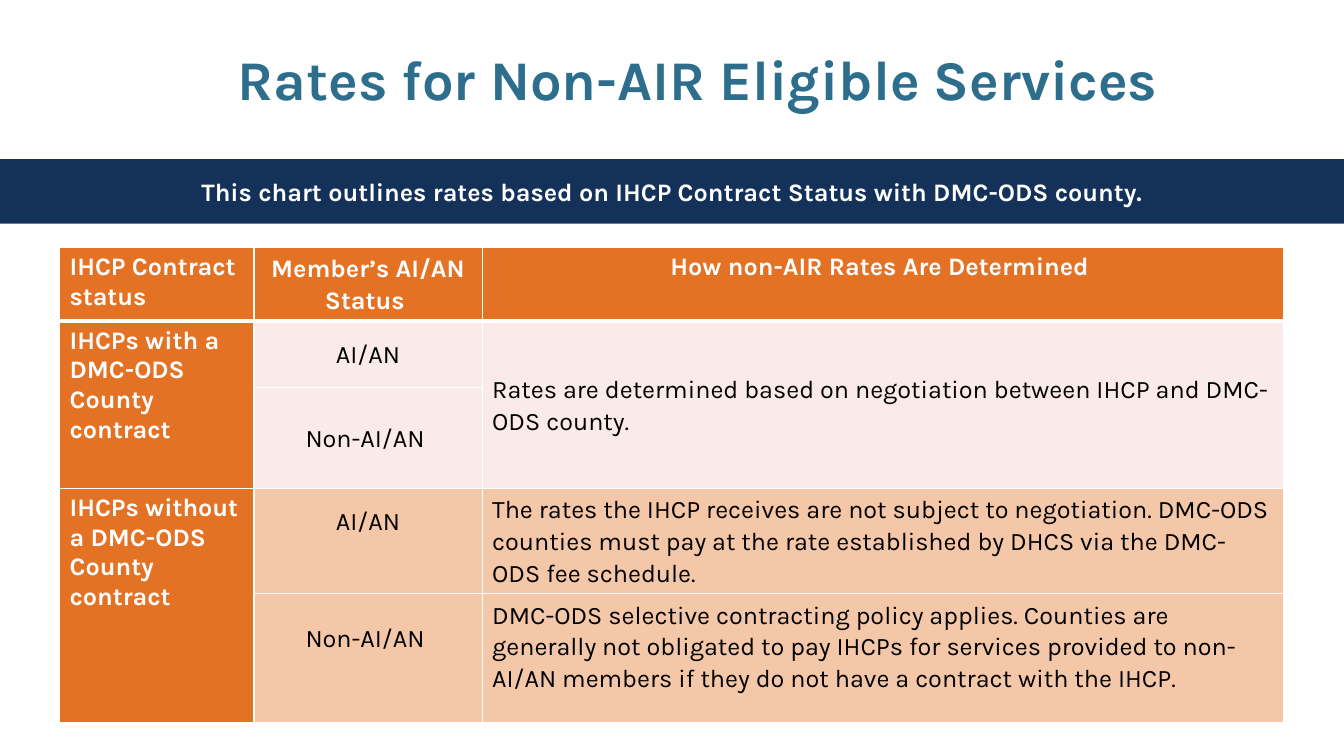
from lxml import etree
from pptx import Presentation, util as u
from pptx.dml.color import RGBColor
from pptx.enum import shapes, text
from pptx.oxml import ns

COLORS = {
    "title": "2D6E8D", "banner": "14315A", "header": "E47225",
    "contracted": "FAEBE8", "uncontracted": "F4C7A8",
    "white": "FFFFFF", "black": "000000",
}
CENTER, LEFT = text.PP_ALIGN.CENTER, text.PP_ALIGN.LEFT
TOP, MIDDLE = text.MSO_ANCHOR.TOP, text.MSO_ANCHOR.MIDDLE


class SlideBuilder:
    """Holds the style and the current slide."""

    font = "Karla"

    def __init__(self, presentation):
        self.slide = presentation.slides.add_slide(presentation.slide_layouts[5])

    def fill(self, target, color):
        target.fill.solid()
        target.fill.fore_color.rgb = RGBColor.from_string(COLORS[color])

    def set_text(self, frame, content, color="white", size=18, bold=True,
                 align=CENTER, spacing=1.0, after=0):
        frame.text = content
        paragraph = frame.paragraphs[0]
        paragraph.alignment = align
        paragraph.line_spacing = spacing
        paragraph.space_after = u.Pt(after)
        font = paragraph.runs[0].font
        font.name, font.size, font.bold = self.font, u.Pt(size), bold
        font.color.rgb = RGBColor.from_string(COLORS[color])

    def title(self, content, left, top, width, height):
        shape = self.slide.shapes.title
        shape.left, shape.top = u.Cm(left), u.Cm(top)
        shape.width, shape.height = u.Cm(width), u.Cm(height)
        self.set_text(shape.text_frame, content, "title", size=40, spacing=0.9)
        shape.text_frame.word_wrap = True
        shape.text_frame.vertical_anchor = MIDDLE

    def banner(self, content, left, top, width, height):
        shape = self.slide.shapes.add_shape(
            shapes.MSO_SHAPE.RECTANGLE,
            u.Cm(left), u.Cm(top), u.Cm(width), u.Cm(height))
        shape.shadow.inherit = False
        shape.line.fill.background()
        self.fill(shape, "banner")
        self.set_text(shape.text_frame, content)
        shape.text_frame.word_wrap = True
        shape.text_frame.vertical_anchor = MIDDLE

    def table(self, left, top, widths, heights):
        table = self.slide.shapes.add_table(
            len(heights), len(widths), u.Cm(left), u.Cm(top),
            u.Cm(sum(widths)), u.Cm(sum(heights))).table
        table.horz_banding = False
        for column, width in zip(table.columns, widths):
            column.width = u.Cm(width)
        for row, height in zip(table.rows, heights):
            row.height = u.Cm(height)
        return table

    def borders(self, cell, **widths):
        properties = cell._tc.get_or_add_tcPr()
        for side in "LRTB":
            line = etree.SubElement(properties, ns.qn(f"a:ln{side}"),
                                    w=str(int(u.Pt(widths.get(side, 1)))))
            solid = etree.SubElement(line, ns.qn("a:solidFill"))
            etree.SubElement(solid, ns.qn("a:srgbClr"), val=COLORS["white"])

    def cell(self, cell, content, anchor=TOP, bottom=0.13, **style):
        self.set_text(cell.text_frame, content, **style)
        cell.vertical_anchor = anchor
        cell.margin_bottom = u.Cm(bottom)


def main():
    presentation = Presentation()
    presentation.slide_width, presentation.slide_height = u.Cm(33.87), u.Cm(19.05)
    builder = SlideBuilder(presentation)

    # Title and banner
    builder.title("Rates for Non-AIR Eligible Services ", 3.15, 0.23, 29.21, 3.68)
    builder.banner("This chart outlines rates based on IHCP Contract Status "
                   "with DMC-ODS county.", 0, 4.01, 33.87, 1.63)

    # Table grid, with a heavier line below the header
    table = builder.table(1.5, 6.24, [4.9, 5.75, 20.2],
                          [1.8, 1.68, 2.54, 2.64, 3.25])
    for row in range(5):
        group = "contracted" if row < 3 else "uncontracted"
        for column in range(3):
            cell = table.cell(row, column)
            builder.borders(cell, T=3 if row == 1 else 1, B=3 if row == 0 else 1)
            builder.fill(cell, "header" if row == 0 or column == 0 else group)
    for row, column in [(1, 0), (1, 2), (3, 0)]:
        table.cell(row, column).merge(table.cell(row + 1, column))

    # Header row
    headers = [("IHCP Contract status", LEFT, 1.0),
               ("Member’s AI/AN Status ", CENTER, 1.07),
               ("How non-AIR Rates Are Determined ", CENTER, 1.0)]
    for column, (content, align, spacing) in enumerate(headers):
        builder.cell(table.cell(0, column), content, align=align, spacing=spacing)

    # Contract status
    for row, word in [(1, "with"), (3, "without")]:
        builder.cell(table.cell(row, 0), f"IHCPs {word} a DMC-ODS County contract",
                     align=LEFT)

    # Member status; the lower pair sits above the middle of its cells
    body = {"color": "black", "bold": False, "spacing": 1.07}
    members = ["AI/AN", "Non-AI/AN ", "AI/AN", "Non-AI/AN "]
    for row, content in enumerate(members, start=1):
        builder.cell(table.cell(row, 1), content, MIDDLE,
                     bottom=0.13 if row < 3 else 1.13, **body)

    # Rates
    rates = [
        (1, MIDDLE, "Rates are determined based on negotiation between IHCP and "
                    "DMC-ODS county."),
        (3, TOP, "The rates the IHCP receives are not subject to negotiation. "
                 "DMC-ODS counties must pay at the rate established by DHCS via "
                 "the DMC-ODS fee schedule."),
        (4, TOP, "DMC-ODS selective contracting policy applies. Counties are "
                 "generally not obligated to pay IHCPs for services provided to "
                 "non-AI/AN members if they do not have a contract with the IHCP."),
    ]
    for row, anchor, content in rates:
        builder.cell(table.cell(row, 2), content, anchor, align=LEFT, **body)

    presentation.save("out.pptx")


if __name__ == "__main__":
    main()
